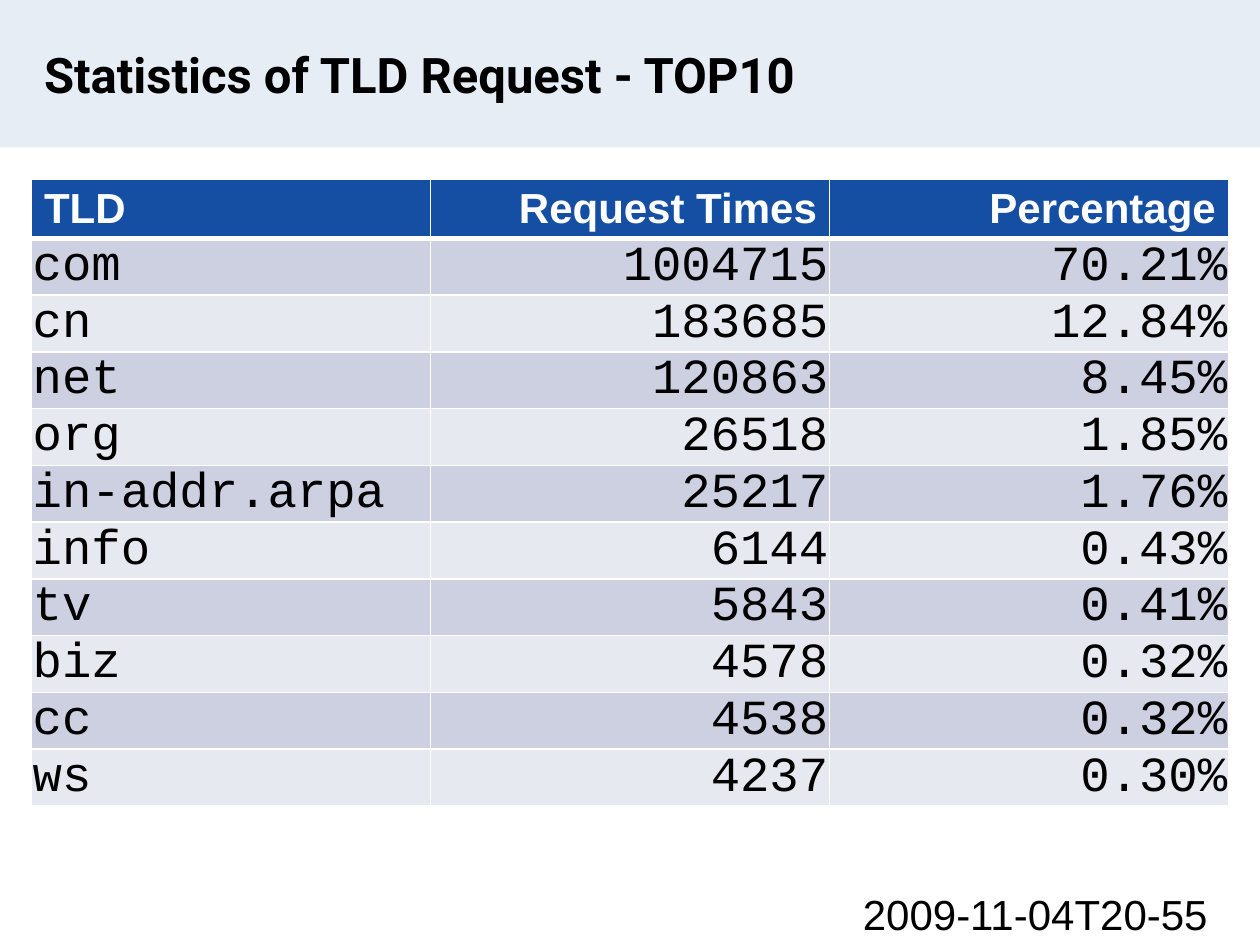
from lxml import etree
from pptx import Presentation
from pptx.dml.color import RGBColor
from pptx.enum import shapes, text
from pptx.oxml import ns
from pptx.util import Inches, Pt

BLUE = RGBColor(0x14, 0x4F, 0xA3)
WHITE = RGBColor(0xFF, 0xFF, 0xFF)
BLACK = RGBColor(0, 0, 0)
BANDS = (RGBColor(0xCC, 0xD0, 0xE0), RGBColor(0xE7, 0xE9, 0xF0))

HEADINGS = ("TLD", "Request Times", "Percentage")
REQUESTS = (
    ("com", "1004715", "70.21%"),
    ("cn", "183685", "12.84%"),
    ("net", "120863", "8.45%"),
    ("org", "26518", "1.85%"),
    ("in-addr.arpa", "25217", "1.76%"),
    ("info", "6144", "0.43%"),
    ("tv", "5843", "0.41%"),
    ("biz", "4578", "0.32%"),
    ("cc", "4538", "0.32%"),
    ("ws", "4237", "0.30%"),
)


def set_font(para, name, size, color, bold=False):
    font = para.font
    font.name, font.size, font.bold = name, Pt(size), bold
    font.color.rgb = color


def add_header(page, left, top, width, height):
    # Pale band behind the title
    band = page.shapes.add_shape(
        shapes.MSO_SHAPE.RECTANGLE, left, top, width, height)
    band.shadow.inherit = False
    band.line.fill.background()
    band.fill.solid()
    band.fill.fore_color.rgb = BLUE
    color = band._element.spPr.find(".//" + ns.qn("a:srgbClr"))
    etree.SubElement(color, ns.qn("a:alpha"), val="10000")
    page.shapes._spTree.insert(2, band._element)

    # Title
    title = page.shapes.title
    title.left, title.top = left + Inches(0.25), top
    title.width, title.height = Inches(8), height
    frame = title.text_frame
    frame.text = "Statistics of TLD Request - TOP10"
    frame.vertical_anchor = text.MSO_ANCHOR.MIDDLE
    para = frame.paragraphs[0]
    para.alignment = text.PP_ALIGN.LEFT
    set_font(para, "Roboto", 28, BLACK, bold=True)


def add_borders(cell, bottom):
    props = cell._tc.get_or_add_tcPr()
    for side, points in (("L", 1), ("R", 1), ("T", 1), ("B", bottom)):
        line = etree.SubElement(props, ns.qn("a:ln" + side), w=str(Pt(points)))
        fill = etree.SubElement(line, ns.qn("a:solidFill"))
        etree.SubElement(fill, ns.qn("a:srgbClr"), val=str(WHITE))


def fill_cell(cell, words, row, column):
    is_heading = row == 0
    add_borders(cell, 3 if is_heading else 1)
    cell.fill.solid()
    cell.fill.fore_color.rgb = BLUE if is_heading else BANDS[(row - 1) % 2]
    cell.text = words
    para = cell.text_frame.paragraphs[0]
    if column:
        para.alignment = text.PP_ALIGN.RIGHT
    if is_heading:
        set_font(para, "Arial", 24, WHITE, bold=True)
    else:
        set_font(para, "Courier New", 28, BLACK)
        cell.vertical_anchor = text.MSO_ANCHOR.MIDDLE
        cell.margin_left = cell.margin_right = cell.margin_top = Inches(0.01)
        cell.margin_bottom = 0


def add_request_table(page, left, top, width, height):
    rows = (HEADINGS,) + REQUESTS
    table = page.shapes.add_table(
        len(rows), len(HEADINGS), left, top, width, height).table
    for row, values in enumerate(rows):
        table.rows[row].height = Inches(0.41)
        for column, words in enumerate(values):
            fill_cell(table.cell(row, column), words, row, column)


def add_timestamp(page, left, top, width, height):
    box = page.shapes.add_textbox(left, top, width, height)
    frame = box.text_frame
    frame.word_wrap = False
    frame.auto_size = text.MSO_AUTO_SIZE.SHAPE_TO_FIT_TEXT
    frame.text = "2009-11-04T20-55"
    set_font(frame.paragraphs[0], "Arial", 24, BLACK)


def main():
    deck = Presentation()
    deck.slide_width, deck.slide_height = Inches(10), Inches(7.5)
    page = deck.slides.add_slide(deck.slide_layouts[5])
    add_header(page, 0, 0, deck.slide_width, Inches(1.17))
    add_request_table(
        page, Inches(0.25), Inches(1.42), Inches(9.5), Inches(5.18))
    add_timestamp(page, Inches(6.75), Inches(7), Inches(2.97), Inches(0.5))
    deck.save("out.pptx")


if __name__ == "__main__":
    main()
